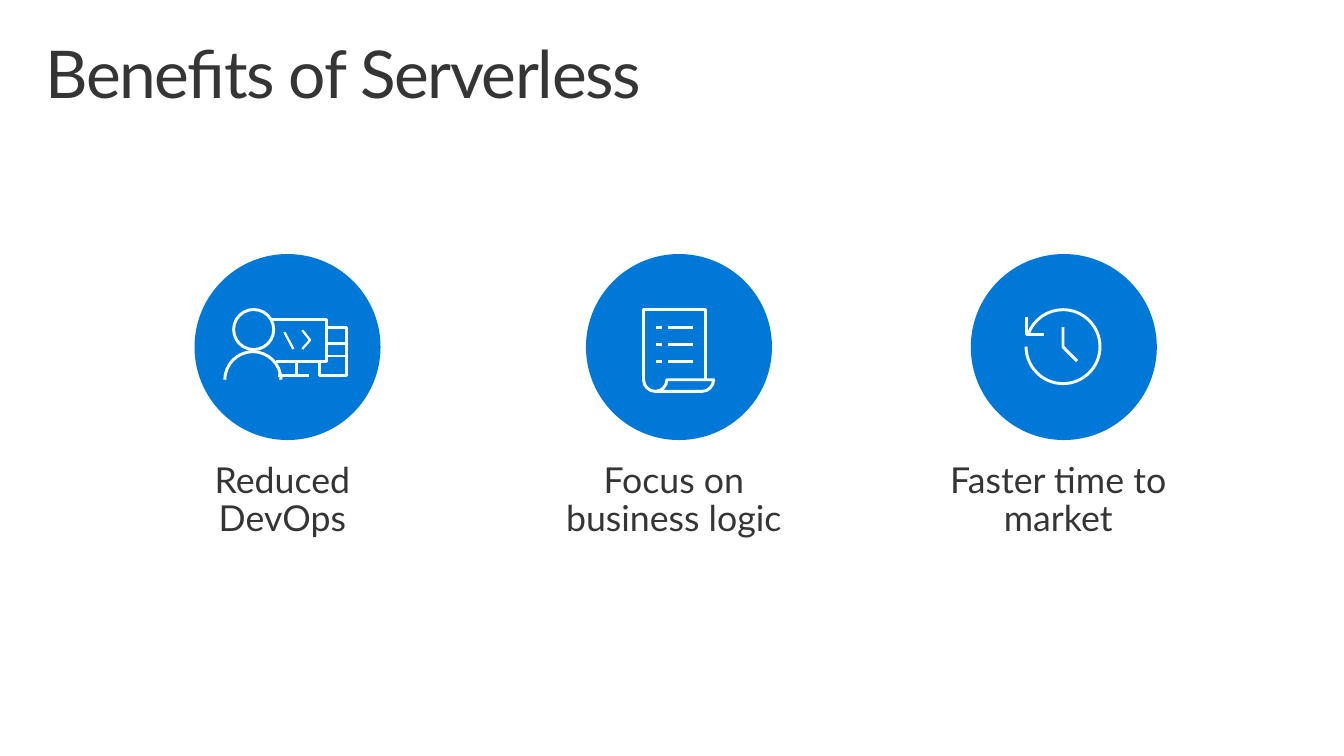
from dataclasses import dataclass
from math import cos, radians, sin, tan

from lxml.etree import SubElement
from pptx import Presentation
from pptx.dml.color import RGBColor
from pptx.enum.shapes import MSO_CONNECTOR, MSO_SHAPE
from pptx.enum.text import MSO_ANCHOR, MSO_AUTO_SIZE, PP_ALIGN
from pptx.oxml.ns import qn
from pptx.shapes.autoshape import Shape
from pptx.shapes.shapetree import GroupShapes
from pptx.slide import Slide
from pptx.util import Cm, Pt

Point = tuple[float, float]

FONT = "Lato"
INK = "353535"
BLUE = "0078D7"
WHITE = "FFFFFF"
BADGE_SIZE = 4.78
BADGE_MIDDLE = 8.92
CAPTION_TOP = 11.48
CAPTION_HEIGHT = 2.87


@dataclass
class Stroke:
    points: list[Point]
    weight: float = 2.13
    segments: str = ""


@dataclass
class Ring:
    center: Point
    diameter: float


@dataclass
class Benefit:
    caption: str
    caption_left: float
    caption_width: float
    badge_center: float
    icon: list[Stroke | Ring]


def color(value: str) -> RGBColor:
    return RGBColor.from_string(value)


def arc(center: Point, radius: float, *angles: int) -> list[Point]:
    def place(angle: float, offset: float) -> Point:
        x = cos(angle) - offset * sin(angle)
        y = sin(angle) + offset * cos(angle)
        return center[0] + radius * x, center[1] + radius * y

    points = [place(radians(angles[0]), 0)]
    for start, stop in zip(map(radians, angles), map(radians, angles[1:])):
        handle = 4 / 3 * tan((stop - start) / 4)
        points += [place(start, handle), place(stop, -handle), place(stop, 0)]
    return points


DEVELOPER = [
    Ring((-0.87, -0.45), 1.03),
    Stroke(arc((-0.89, 0.84), 0.72, 360, 270, 180), segments="CC"),
    Stroke([(-0.3, 0.37), (1, 0.37), (1, -0.71), (-0.43, -0.71)]),
    Stroke([(0.23, 0.74), (0.23, 0.37)]),
    Stroke([(1, -0.51), (1.52, -0.51), (1.52, 0.74), (0.82, 0.74), (0.82, 0.37)]),
    Stroke([(0.54, 0.74), (-0.24, 0.74)]),
    *[Stroke([(1.52, shelf), (1, shelf)]) for shelf in (-0.1, 0.23)],
    Stroke([(-0.08, -0.38), (0.15, 0.05)], 1.63),
    Stroke([(0.38, -0.43), (0.58, -0.18), (0.38, 0.05)], 1.63),
]

SCROLL = [
    Stroke(
        arc((-0.61, 0.84), 0.3, 180, 90, 0)
        + arc((0.59, 0.84), 0.3, 0, 90)
        + [(-0.61, 1.14)],
        segments="CCLCL",
    ),
    Stroke([(-0.91, 0.85), (-0.91, -0.97), (0.68, -0.97), (0.68, 0.84)]),
    *[
        Stroke([(left, row), (right, row)])
        for left, right in ((-0.28, 0.36), (-0.58, -0.43))
        for row in (-0.51, -0.07, 0.37)
    ],
]

CLOCK = [
    Stroke(arc((-0.02, -0.01), 0.95, 180, 90, 0, -90, -159), segments="CCCC"),
    Stroke([(-0.02, -0.51), (-0.02, 0), (0.34, 0.36)]),
    Stroke([(-0.51, -0.33), (-0.97, -0.33), (-0.97, -0.76)]),
]

BENEFITS = [
    Benefit("Focus on business logic", 13.68, 7.54, 17.45, SCROLL),
    Benefit("Faster time to market", 23.85, 6.96, 27.34, CLOCK),
    Benefit("Reduced DevOps", 3.73, 7.32, 7.39, DEVELOPER),
]


def add_text(slide: Slide, text: str, box: tuple[float, ...],
             insets: tuple[float, ...], size: int) -> Shape:
    label = slide.shapes.add_textbox(*map(Cm, box))
    frame = label.text_frame
    frame.text = text
    frame.word_wrap = True
    frame.vertical_anchor = MSO_ANCHOR.TOP
    frame.margin_left, frame.margin_top, frame.margin_right, frame.margin_bottom = map(Cm, insets)
    paragraph = frame.paragraphs[0]
    paragraph.line_spacing = 0.9
    font = paragraph.runs[0].font
    font.name = FONT
    font.size = Pt(size)
    font.color.rgb = color(INK)
    return label


def add_circle(shapes: GroupShapes, center: Point, diameter: float) -> Shape:
    left, top = (Cm(value - diameter / 2) for value in center)
    circle = shapes.add_shape(MSO_SHAPE.OVAL, left, top, Cm(diameter), Cm(diameter))
    circle.shadow.inherit = False
    return circle


def bend(curve: Shape, segments: str) -> None:
    outline = next(curve._element.iter(qn("a:path")))
    steps = iter(outline.findall(qn("a:lnTo")))
    for segment in segments:
        if segment == "L":
            outline.append(next(steps))
            continue
        bezier = SubElement(outline, qn("a:cubicBezTo"))
        for _ in range(3):
            step = next(steps)
            bezier.append(step[0])
            outline.remove(step)


def add_stroke(shapes: GroupShapes, stroke: Stroke, origin: Point) -> None:
    points = [(Cm(origin[0] + x), Cm(origin[1] + y)) for x, y in stroke.points]
    if len(points) == 2:
        drawn = shapes.add_connector(MSO_CONNECTOR.STRAIGHT, *points[0], *points[1])
        SubElement(drawn._element.spPr, qn("a:effectLst"))
    else:
        builder = shapes.build_freeform(*points[0])
        builder.add_line_segments(points[1:], close=False)
        drawn = builder.convert_to_shape()
        bend(drawn, stroke.segments)
        drawn.shadow.inherit = False
        drawn.fill.background()
    drawn.line.color.rgb = color(WHITE)
    drawn.line.width = Pt(stroke.weight)


def add_caption(slide: Slide, benefit: Benefit) -> None:
    caption = add_text(
        slide, benefit.caption,
        (benefit.caption_left, CAPTION_TOP, benefit.caption_width, CAPTION_HEIGHT),
        (0.25, 0.41, 0.51, 0.41), 26,
    )
    caption.text_frame.auto_size = MSO_AUTO_SIZE.SHAPE_TO_FIT_TEXT
    paragraph = caption.text_frame.paragraphs[0]
    paragraph.alignment = PP_ALIGN.CENTER
    paragraph.space_after = Pt(12.2)


def add_badge(slide: Slide, benefit: Benefit) -> None:
    shapes = slide.shapes.add_group_shape().shapes
    origin = (benefit.badge_center, BADGE_MIDDLE)
    badge = add_circle(shapes, origin, BADGE_SIZE)
    badge.fill.solid()
    badge.fill.fore_color.rgb = color(BLUE)
    badge.line.fill.background()
    for part in benefit.icon:
        if isinstance(part, Stroke):
            add_stroke(shapes, part, origin)
        else:
            center = (origin[0] + part.center[0], origin[1] + part.center[1])
            head = add_circle(shapes, center, part.diameter)
            head.fill.background()
            head.line.color.rgb = color(WHITE)
            head.line.width = Pt(2.13)


def main() -> None:
    presentation = Presentation()
    presentation.slide_width = Cm(34.54)
    presentation.slide_height = Cm(19.43)
    slide = presentation.slides.add_slide(presentation.slide_layouts[6])
    for benefit in BENEFITS:
        add_caption(slide, benefit)
    title = add_text(slide, "Benefits of Serverless", (0.76, 0.81, 33.02, 2.54),
                     (0.41, 0.25, 0.41, 0.25), 48)
    title.text_frame.paragraphs[0].runs[0].font._element.set("spc", "-102")
    for benefit in sorted(BENEFITS, key=lambda item: item.badge_center):
        add_badge(slide, benefit)
    presentation.save("out.pptx")


if __name__ == "__main__":
    main()
